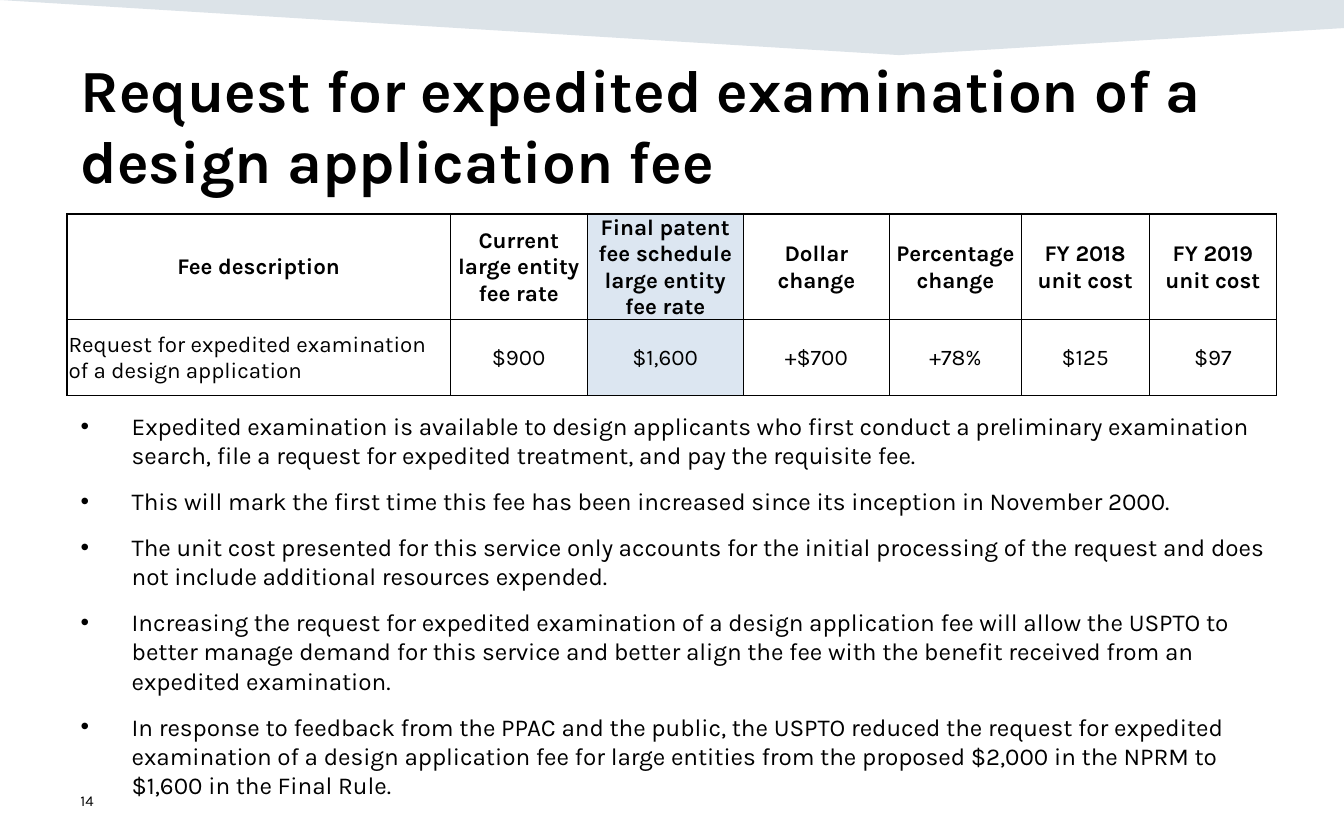
from lxml import etree
from pptx import Presentation
from pptx.dml.color import RGBColor
from pptx.enum.text import MSO_ANCHOR, MSO_AUTO_SIZE, PP_ALIGN
from pptx.oxml.ns import qn
from pptx.util import Inches, Pt

LEFT, CENTER = PP_ALIGN.LEFT, PP_ALIGN.CENTER
TOP, MIDDLE = MSO_ANCHOR.TOP, MSO_ANCHOR.MIDDLE
NO_AUTOFIT = MSO_AUTO_SIZE.NONE

FONT = "Karla"
BLACK, BAND, HIGHLIGHT = "000000", "164469", "DCE6F1"
THIN, THICK = 0.5, 1

TITLE = "Request for expedited examination of a design application fee"
FEE_COLUMNS = [2.85, 1.02, 1.16, 1.09, 0.98, 0.95, 0.95]
FEE_ROW_HEIGHTS = [0.79, 0.56]
FINAL_FEE_COLUMN = 2
FEE_ROWS = [
    ["Fee description", "Current large entity fee rate",
     "Final patent fee schedule large entity fee rate", "Dollar change",
     "Percentage change", "FY 2018 unit cost", "FY 2019 unit cost"],
    ["Request for expedited examination of a design application",
     "$900", "$1,600", "+$700", "+78%", "$125", "$97"],
]
POINTS = [
    "Expedited examination is available to design applicants who first conduct a preliminary "
    "examination search, file a request for expedited treatment, and pay the requisite fee.",
    "This will mark the first time this fee has been increased since its inception in "
    "November 2000.",
    "The unit cost presented for this service only accounts for the initial processing of the "
    "request and does not include additional resources expended.",
    "Increasing the request for expedited examination of a design application fee will allow "
    "the USPTO to better manage demand for this service and better align the fee with the "
    "benefit received from an expedited examination.",
    "In response to feedback from the PPAC and the public, the USPTO reduced the request for "
    "expedited examination of a design application fee for large entities from the proposed "
    "$2,000 in the NPRM to $1,600 in the Final Rule.",
]


def rgb(color):
    return RGBColor.from_string(color)


def add_text(p, text, size=12, bold=False, color=BLACK, align=LEFT, before=0):
    """Format paragraph p and add text to it as one run."""
    p.alignment = align
    p.space_before = Pt(before)
    r = p.add_run()
    r.text = text
    r.font.name = FONT
    r.font.size = Pt(size)
    r.font.bold = bold
    r.font.color.rgb = rgb(color)


def place(sp, left, top, width, height, anchor=TOP):
    """Move a text shape to its box and return its text frame."""
    sp.left, sp.top = Inches(left), Inches(top)
    sp.width, sp.height = Inches(width), Inches(height)
    tf = sp.text_frame
    tf.word_wrap = True
    tf.auto_size = NO_AUTOFIT
    tf.vertical_anchor = anchor
    return tf


def set_bullet(p, indent):
    pPr = p._p.get_or_add_pPr()
    pPr.set("marL", str(Inches(indent)))
    pPr.set("indent", str(-Inches(indent)))
    etree.SubElement(pPr, qn("a:buFont"), typeface="Arial")
    etree.SubElement(pPr, qn("a:buChar"), char="•")


def set_borders(cell, **widths):
    """Draw the cell's edges, given as L, R, T and B in points."""
    tcPr = cell._tc.get_or_add_tcPr()
    for i, edge in enumerate("LRTB"):
        ln = etree.Element(qn(f"a:ln{edge}"), w=str(Pt(widths[edge])))
        fill = etree.SubElement(ln, qn("a:solidFill"))
        etree.SubElement(fill, qn("a:srgbClr"), val=BLACK)
        tcPr.insert(i, ln)


def add_top_band(s, left, top, width, height):
    x, y = Inches(left), Inches(top)
    right = x + Inches(width)
    builder = s.shapes.build_freeform(x, y)
    builder.add_line_segments([
        (right, y),
        (right, y + Inches(height * 0.51)),
        (x + Inches(width * 0.669), y + Inches(height)),
    ], close=True)
    sp = builder.convert_to_shape()
    sp.shadow.inherit = False
    sp.line.fill.background()
    sp.fill.solid()
    sp.fill.fore_color.rgb = rgb(BAND)
    color = sp._element.spPr.find(f"{qn('a:solidFill')}/{qn('a:srgbClr')}")
    etree.SubElement(color, qn("a:alpha"), val="15000")


def fill_title(s, left, top, width, height):
    tf = place(s.shapes.title, left, top, width, height)
    add_text(tf.paragraphs[0], TITLE, size=32, bold=True)


def add_fee_table(s, left, top, width, height):
    frame = s.shapes.add_table(len(FEE_ROWS), len(FEE_COLUMNS), Inches(left), Inches(top),
                               Inches(width), Inches(height))
    table = frame.table
    for column, column_width in zip(table.columns, FEE_COLUMNS):
        column.width = Inches(column_width)
    for row, row_height in zip(table.rows, FEE_ROW_HEIGHTS):
        row.height = Inches(row_height)
    last = len(FEE_COLUMNS) - 1
    for i, texts in enumerate(FEE_ROWS):
        for j, text in enumerate(texts):
            cell = table.cell(i, j)
            cell.vertical_anchor = MIDDLE
            cell.margin_left = cell.margin_right = cell.margin_top = Inches(0.01)
            cell.margin_bottom = 0
            if j == FINAL_FEE_COLUMN:
                cell.fill.solid()
                cell.fill.fore_color.rgb = rgb(HIGHLIGHT)
            else:
                cell.fill.background()
            set_borders(cell, L=THICK if j == 0 else THIN, R=THICK if j == last else THIN,
                        T=THICK if i == 0 else THIN, B=THIN)
            add_text(cell.text_frame.paragraphs[0], text, bold=i == 0,
                     align=LEFT if i and j == 0 else CENTER)


def fill_points(s, left, top, width, height):
    tf = place(s.placeholders[1], left, top, width, height)
    for i, point in enumerate(POINTS):
        p = tf.add_paragraph() if i else tf.paragraphs[0]
        add_text(p, point, size=13, before=9)
        set_bullet(p, 0.38)


def add_page_number(s, left, top, width, height):
    sp = s.shapes.add_textbox(0, 0, 0, 0)
    tf = place(sp, left, top, width, height, anchor=MIDDLE)
    add_text(tf.paragraphs[0], "14", size=8)


def main():
    prs = Presentation()
    prs.slide_width, prs.slide_height = Inches(10), Inches(6.25)
    s = prs.slides.add_slide(prs.slide_layouts[1])
    add_top_band(s, 0, 0, 10, 0.41)
    fill_title(s, 0.5, 0.34, 9, 1.04)
    add_fee_table(s, 0.5, 1.59, sum(FEE_COLUMNS), sum(FEE_ROW_HEIGHTS))
    fill_points(s, 0.5, 3.01, 9, 2.4)
    add_page_number(s, 0.5, 5.79, 2.25, 0.33)
    prs.save("out.pptx")


if __name__ == "__main__":
    main()
